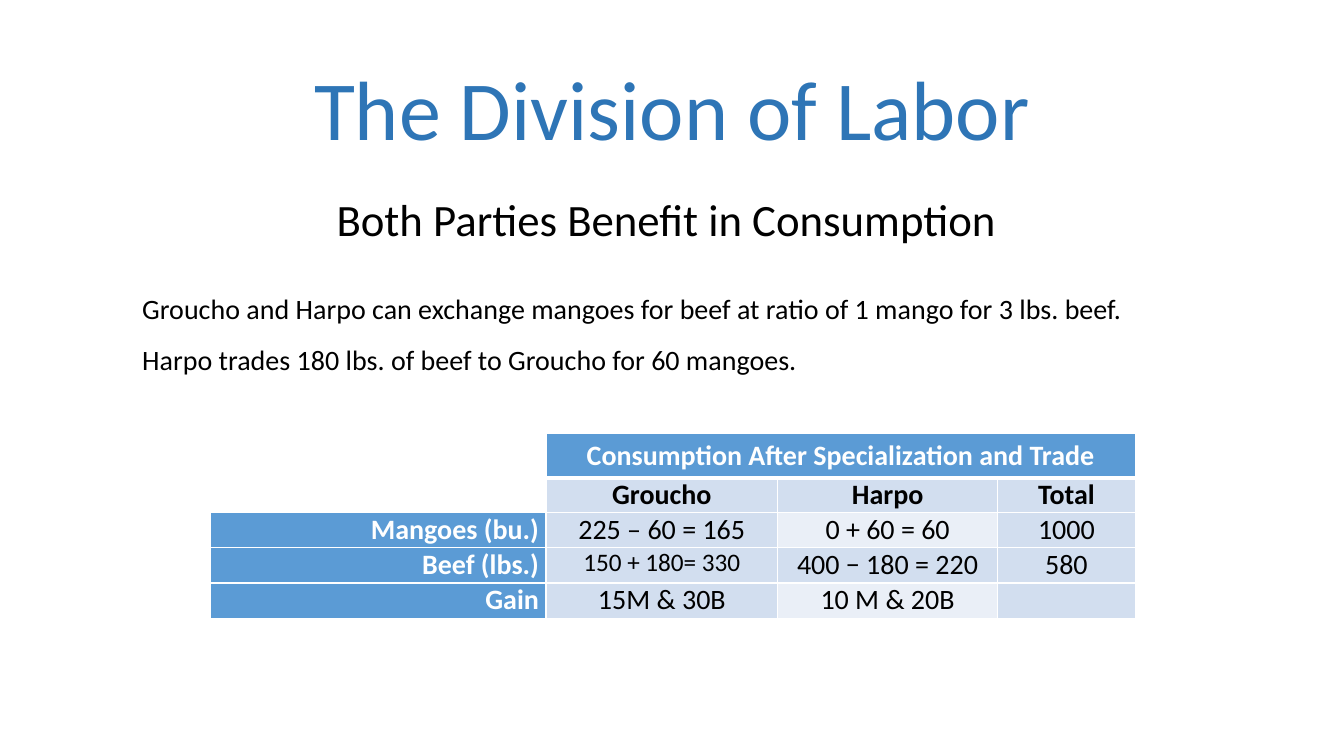
"""Build the Division of Labor slide with its consumption table."""
from lxml.etree import SubElement
from pptx import Presentation
from pptx.dml.color import RGBColor
from pptx.enum.text import MSO_ANCHOR, PP_ALIGN
from pptx.oxml.ns import qn
from pptx.util import Pt

TITLE_BLUE = RGBColor(0x2E, 0x75, 0xB6)
HEADER_BLUE = RGBColor(0x5B, 0x9B, 0xD5)
BAND_BLUE = RGBColor(0xD2, 0xDE, 0xEF)
PALE_BLUE = RGBColor(0xEA, 0xEF, 0xF7)
BLACK = RGBColor(0, 0, 0)
WHITE = RGBColor(0xFF, 0xFF, 0xFF)

COLUMN_WIDTHS = [240, 165.6, 157, 98.4]
ROW_HEIGHTS = [31.6, 25.1, 25.1, 25.1, 25.1]
CONSUMPTION = [
    ["", "Consumption After Specialization and Trade", "", ""],
    ["", "Groucho", "Harpo", "Total"],
    ["Mangoes (bu.)", "225 – 60 = 165", "0 + 60 = 60", "1000"],
    ["Beef (lbs.)", "150 + 180= 330", "400 − 180 = 220", "580"],
    ["Gain", "15M & 30B", "10 M & 20B", ""],
]
PALE_CELLS = {(2, 2), (4, 2)}
SMALL_CELL = (3, 1)


class SlideBuilder:
    def __init__(self, slide, font="Calibri"):
        self.slide = slide
        self.font = font

    def add_run(self, paragraph, text, size, color=BLACK, bold=False):
        run = paragraph.add_run()
        run.text = text
        run.font.name = self.font
        run.font.size = Pt(size)
        run.font.bold = bold
        run.font.color.rgb = color

    def add_text(self, box, lines, size, color=BLACK, spacing=1.0,
                 align=PP_ALIGN.LEFT, anchor=MSO_ANCHOR.TOP):
        shape = self.slide.shapes.add_textbox(*map(Pt, box))
        frame = shape.text_frame
        frame.word_wrap = True
        frame.vertical_anchor = anchor
        for index, line in enumerate(lines):
            paragraph = frame.add_paragraph() if index else frame.paragraphs[0]
            paragraph.alignment = align
            paragraph.line_spacing = spacing
            self.add_run(paragraph, line, size, color)

    def add_borders(self, cell, top, bottom):
        properties = cell._tc.get_or_add_tcPr()
        for side, width in (("L", 1), ("R", 1), ("T", top), ("B", bottom)):
            line = SubElement(properties, qn(f"a:ln{side}"), w=str(Pt(width)))
            fill = SubElement(line, qn("a:solidFill"))
            SubElement(fill, qn("a:srgbClr"), val=str(WHITE))

    def fill_cell(self, cell, row, column, text):
        is_label = column == 0 and row > 1
        is_header = row == 0 and column > 0
        self.add_borders(cell, 3 if row == 1 else 1, 3 if row == 0 else 1)
        cell.margin_left = cell.margin_right = Pt(5)
        cell.margin_top = cell.margin_bottom = Pt(0)
        cell.vertical_anchor = MSO_ANCHOR.MIDDLE if row == 0 else MSO_ANCHOR.TOP
        cell.fill.solid()
        if is_label or is_header:
            cell.fill.fore_color.rgb = HEADER_BLUE
        elif column == 0:
            cell.fill.fore_color.rgb = WHITE
        else:
            pale = (row, column) in PALE_CELLS
            cell.fill.fore_color.rgb = PALE_BLUE if pale else BAND_BLUE
        if text:
            paragraph = cell.text_frame.paragraphs[0]
            paragraph.alignment = PP_ALIGN.RIGHT if is_label else PP_ALIGN.CENTER
            self.add_run(paragraph, text,
                         18 if (row, column) == SMALL_CELL else 20,
                         WHITE if is_label or is_header else BLACK,
                         row < 2 or is_label)

    def add_table(self, left, top, widths, heights, rows):
        table = self.slide.shapes.add_table(
            len(heights), len(widths), Pt(left), Pt(top),
            Pt(sum(widths)), Pt(sum(heights))).table
        table.horz_banding = table.first_row = False
        for column, width in zip(table.columns, widths):
            column.width = Pt(width)
        for row, height in zip(table.rows, heights):
            row.height = Pt(height)
        for row, texts in enumerate(rows):
            for column, text in enumerate(texts):
                self.fill_cell(table.cell(row, column), row, column, text)
        table.cell(0, 1).merge(table.cell(0, len(widths) - 1))


def main():
    presentation = Presentation()
    presentation.slide_width = Pt(960)
    presentation.slide_height = Pt(540)
    builder = SlideBuilder(
        presentation.slides.add_slide(presentation.slide_layouts[6]))
    builder.add_text((66, 28.8, 828, 104.4), ["The Division of Labor"], 60,
                     TITLE_BLUE, 0.9, PP_ALIGN.CENTER, MSO_ANCHOR.MIDDLE)
    builder.add_table(150, 309.6, COLUMN_WIDTHS, ROW_HEIGHTS, CONSUMPTION)
    builder.add_text((233.3, 133.2, 493.2, 46),
                     ["Both Parties Benefit in Consumption"], 32)
    builder.add_text((94.5, 193, 771, 76.3), [
        "Groucho and Harpo can exchange mangoes for beef at ratio of "
        "1 mango for 3 lbs. beef.",
        "Harpo trades 180 lbs. of beef to Groucho for 60 mangoes.",
    ], 20, spacing=1.5)
    presentation.save("out.pptx")


if __name__ == "__main__":
    main()
